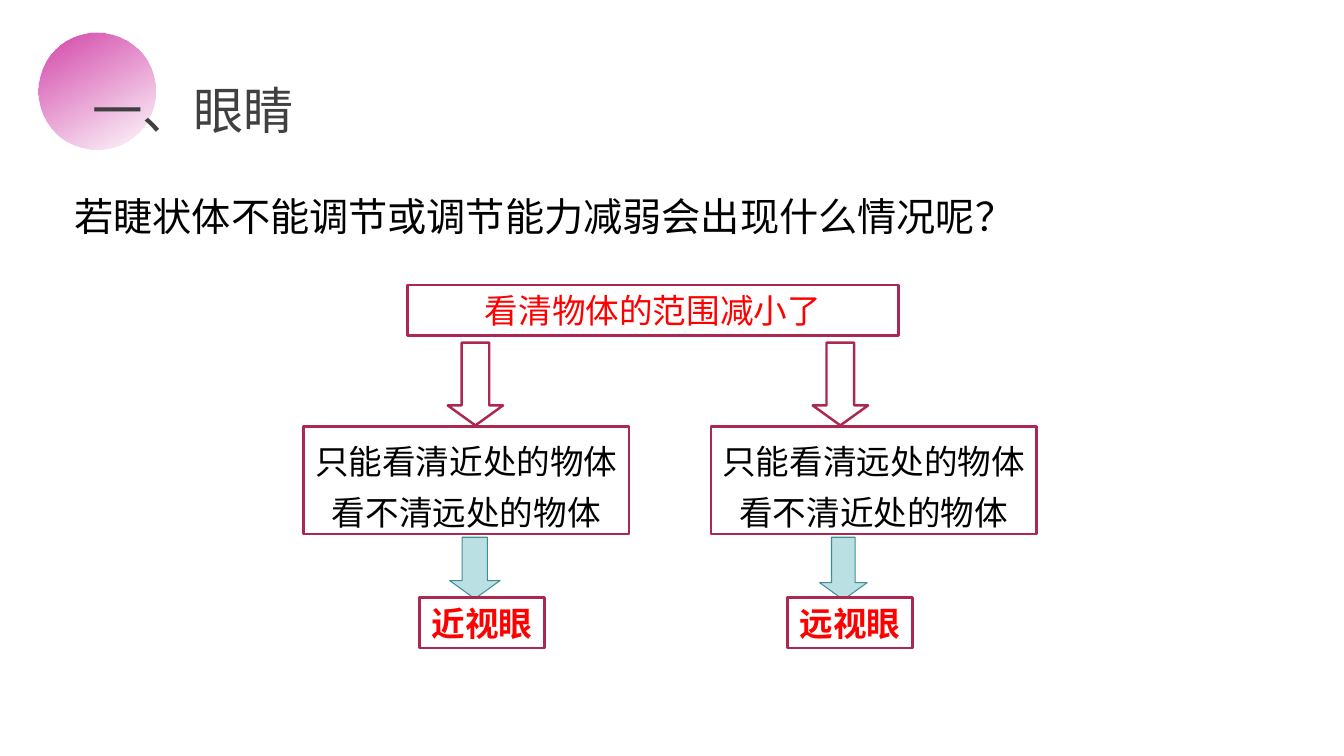
from dataclasses import dataclass

from lxml import etree
from pptx import Presentation
from pptx.dml.color import RGBColor
from pptx.enum.shapes import MSO_SHAPE
from pptx.enum.text import MSO_ANCHOR, MSO_AUTO_SIZE, PP_ALIGN
from pptx.oxml.ns import qn
from pptx.util import Inches, Pt

OVAL, RECT, DOWN_ARROW = MSO_SHAPE.OVAL, MSO_SHAPE.RECTANGLE, MSO_SHAPE.DOWN_ARROW
LEFT, CENTER = PP_ALIGN.LEFT, PP_ALIGN.CENTER
TOP = MSO_ANCHOR.TOP
GROW = MSO_AUTO_SIZE.SHAPE_TO_FIT_TEXT

WHITE = RGBColor(0xFF, 0xFF, 0xFF)
BLACK = RGBColor(0x00, 0x00, 0x00)
GREY = RGBColor(0x40, 0x40, 0x40)
RED = RGBColor(0xFF, 0x00, 0x00)
CRIMSON = RGBColor(0xAD, 0x28, 0x51)
PINK = RGBColor(0xD3, 0x43, 0xA9)
PALE_TEAL = RGBColor(0xBB, 0xE0, 0xE3)
TEAL = RGBColor(0x3D, 0x8F, 0x95)
FONT = "Arial"


@dataclass
class Text:
    left: float
    top: float
    width: float
    height: float
    lines: tuple[str, ...]
    size: int = 24
    color: RGBColor = BLACK
    bold: bool = False
    spacing: float = 1.0
    align: PP_ALIGN = CENTER
    wrap: bool = False
    boxed: bool = True


@dataclass
class Arrow:
    left: float
    top: float
    width: float
    height: float
    fill: RGBColor = WHITE
    line: RGBColor = CRIMSON
    weight: float = 1.75


HEADINGS = [
    Text(0.64, 1.74, 12.81, 0.69, ("若睫状体不能调节或调节能力减弱会出现什么情况呢？",),
         size=28, spacing=1.25, align=LEFT, wrap=True, boxed=False),
    Text(0.82, 0.74, 2.37, 0.71, ("一、眼睛",),
         size=36, color=GREY, align=LEFT, wrap=True, boxed=False),
]
CAUSE = Text(4.04, 2.83, 4.87, 0.5, ("看清物体的范围减小了",), color=RED, wrap=True)
EFFECTS = [
    Text(left, 4.23, 3.23, 1.07, (f"只能看清{clear}处的物体", f"看不清{blurred}处的物体"),
         spacing=1.25)
    for left, clear, blurred in ((3.01, "近", "远"), (7.05, "远", "近"))
]
CONDITIONS = [
    Text(left, 5.93, 1.24, 0.5, (name,), color=RED, bold=True)
    for left, name in ((4.16, "近视眼"), (7.81, "远视眼"))
]
ARROWS = [Arrow(left, 3.4, 0.55, 0.82) for left in (4.44, 8.06)] + [
    Arrow(4.46, 5.33, 0.5, 0.61, PALE_TEAL, TEAL, 0.75),
    Arrow(8.13, 5.33, 0.47, 0.62, PALE_TEAL, TEAL, 0.75),
]


def add_outlined(s, kind: MSO_SHAPE, item: Text | Arrow, fill: RGBColor,
                 line: RGBColor, weight: float):
    sp = s.shapes.add_shape(kind, Inches(item.left), Inches(item.top),
                            Inches(item.width), Inches(item.height))
    sp.shadow.inherit = False
    sp.fill.solid()
    sp.fill.fore_color.rgb = fill
    sp.line.color.rgb = line
    sp.line.width = Pt(weight)
    return sp


def draw_text(s, text: Text) -> None:
    if text.boxed:
        sp = add_outlined(s, RECT, text, WHITE, CRIMSON, 1.75)
    else:
        sp = s.shapes.add_textbox(Inches(text.left), Inches(text.top),
                                  Inches(text.width), Inches(text.height))
    tf = sp.text_frame
    tf.word_wrap = text.wrap
    tf.auto_size = GROW
    tf.vertical_anchor = TOP
    for i, line in enumerate(text.lines):
        p = tf.add_paragraph() if i else tf.paragraphs[0]
        p.text = line
        p.alignment = text.align
        p.line_spacing = text.spacing
        p.font.name = FONT
        p.font.size = Pt(text.size)
        p.font.bold = text.bold
        p.font.color.rgb = text.color


def draw_arrow(s, arrow: Arrow) -> None:
    sp = add_outlined(s, DOWN_ARROW, arrow, arrow.fill, arrow.line, arrow.weight)
    sp.adjustments[0] = 0.5
    sp.adjustments[1] = 0.36


def draw_fading_disc(s) -> None:
    sp = s.shapes.add_shape(OVAL, Inches(0.38), Inches(0.32), Inches(1.16), Inches(1.16))
    sp.shadow.inherit = False
    sp.line.fill.background()
    sp.fill.gradient()
    sp.fill.gradient_angle = 300
    for position, stop in enumerate(sp.fill.gradient_stops):
        stop.position = position
        stop.color.rgb = PINK
    end_color = list(sp.fill._xPr.iter(qn("a:srgbClr")))[-1]
    etree.SubElement(end_color, qn("a:alpha"), val="0")


def main() -> None:
    prs = Presentation()
    prs.slide_width = Inches(13.33)
    prs.slide_height = Inches(7.5)
    s = prs.slides.add_slide(prs.slide_layouts[6])
    draw_fading_disc(s)
    for arrow in ARROWS:
        draw_arrow(s, arrow)
    for text in [*HEADINGS, CAUSE, *EFFECTS, *CONDITIONS]:
        draw_text(s, text)
    prs.save("out.pptx")


if __name__ == "__main__":
    main()
